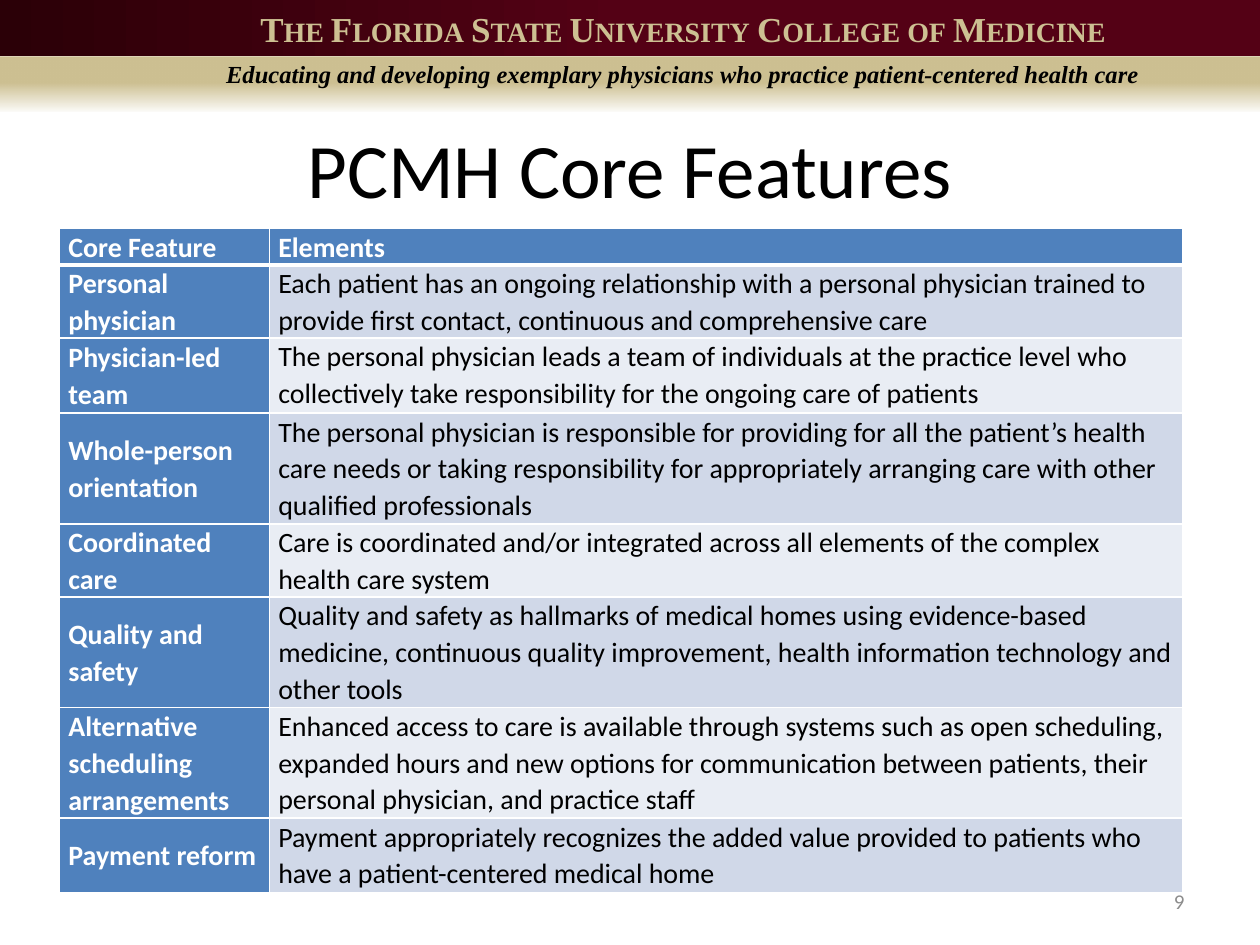
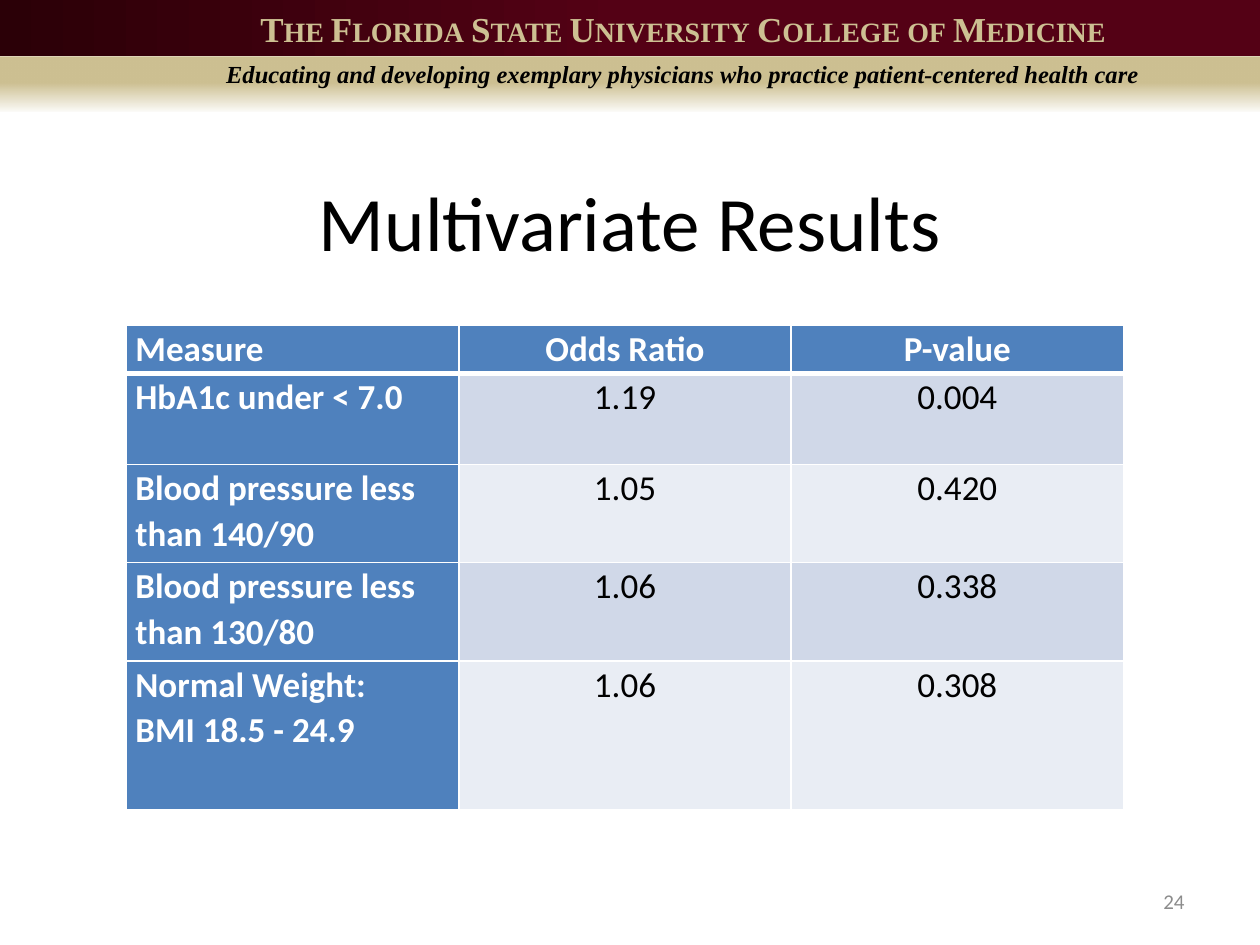
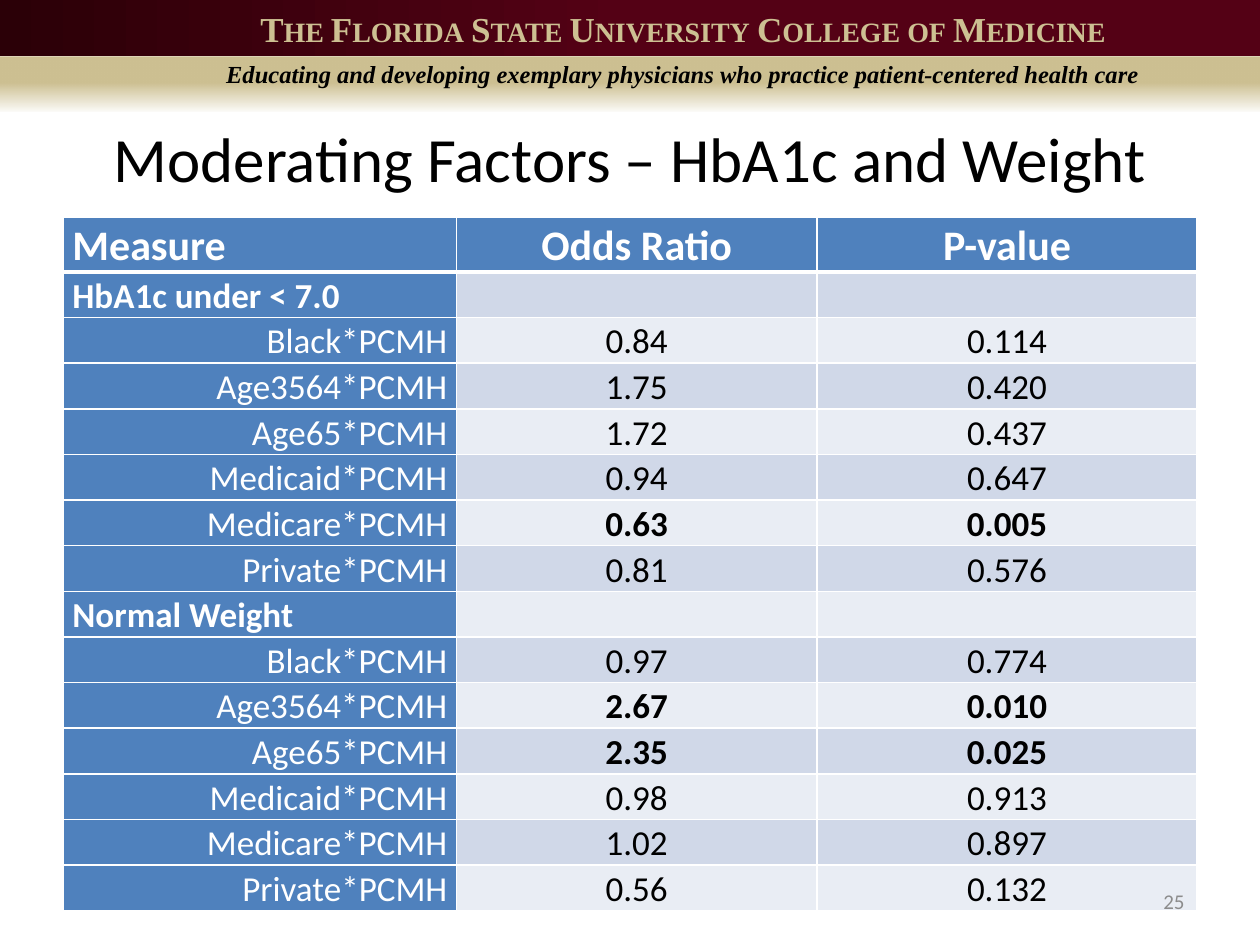
from dataclasses import dataclass

import pptx
import pptx.dml.color
import pptx.enum.shapes
import pptx.enum.text
import pptx.oxml
import pptx.oxml.ns
import pptx.util
from lxml import etree

Cm = pptx.util.Cm
ALIGN = pptx.enum.text.PP_ALIGN
ANCHOR = pptx.enum.text.MSO_ANCHOR
qn = pptx.oxml.ns.qn


@dataclass(frozen=True)
class Theme:
    garnet: str = "540115"
    dark_garnet: str = "2B0007"
    gold: str = "CDC092"
    blue: str = "4F81BD"
    odd_row: str = "D0D8E8"
    even_row: str = "E9EDF4"
    white: str = "FFFFFF"
    black: str = "000000"
    gray: str = "8C8C8C"
    body_font: str = "Calibri"
    banner_font: str = "Times New Roman"
    title_size: int = 44
    long_title_size: int = 36
    large_size: int = 24
    medium_size: int = 20
    small_size: int = 16
    slogan_size: int = 14
    number_size: int = 12
    line_spacing: float = 1.07
    thin_border: float = 1
    thick_border: float = 3


THEME = Theme()


def rgb(color):
    return pptx.dml.color.RGBColor.from_string(color)


def write(frame, text, *, size, color=THEME.black, font=THEME.body_font, bold=False,
          italic=False, small_caps=False, align=ALIGN.LEFT, spacing=None):
    """Fill a text frame, one paragraph for each line of text."""
    frame.word_wrap = True
    for index, line in enumerate(text.split("\n")):
        para = frame.add_paragraph() if index else frame.paragraphs[0]
        para.alignment = align
        if spacing:
            para.line_spacing = spacing
        span = para.add_run()
        span.text = line
        span.font.name = font
        span.font.size = pptx.util.Pt(size)
        span.font.bold = bold
        span.font.italic = italic
        span.font.color.rgb = rgb(color)
        if small_caps:
            span.font._element.set("cap", "small")


def set_border(cell, side, width):
    """Draw a white border on side L, R, T or B; call before the cell is filled."""
    line = etree.SubElement(cell._tc.get_or_add_tcPr(), qn(f"a:ln{side}"),
                            w=str(pptx.util.Pt(width)))
    fill = etree.SubElement(line, qn("a:solidFill"))
    etree.SubElement(fill, qn("a:srgbClr"), val=THEME.white)


class Builder:
    def __init__(self, theme):
        self.theme = theme
        self.deck = pptx.Presentation()
        self.deck.slide_width = Cm(25.4)
        self.deck.slide_height = Cm(19.05)
        self.page = None

    def start(self, title, number, title_top, title_size=THEME.title_size):
        """Add a page with its banner, title and number."""
        theme = self.theme
        self.page = self.deck.slides.add_slide(self.deck.slide_layouts[6])
        self.band(1.14, 1.1, 270, [(0.47, theme.gold), (1, theme.gold)], end_alpha=5)
        self.band(0, 1.14, 180, [(0.5, theme.garnet), (1, theme.dark_garnet)])
        self.text("The Florida State University College of Medicine",
                  1.07, 0.03, 25.4, 1.12, size=theme.medium_size, color=theme.gold,
                  font=theme.banner_font, bold=True, small_caps=True, align=ALIGN.CENTER)
        self.text("Educating and developing exemplary physicians who practice "
                  "patient-centered health care",
                  1.07, 1.06, 25.4, 0.85, size=theme.slogan_size, font=theme.banner_font,
                  bold=True, italic=True, align=ALIGN.CENTER)
        self.text(title, 1.27, title_top, 22.86, 1.7, anchor=ANCHOR.MIDDLE,
                  size=title_size, align=ALIGN.CENTER)
        self.number = number

    def finish(self):
        """Add the page number in front of everything else."""
        self.text(str(self.number), 18.21, 17.65, 5.92, 1.02, anchor=ANCHOR.MIDDLE,
                  size=self.theme.number_size, color=self.theme.gray, align=ALIGN.RIGHT)

    def band(self, top, height, angle, stops, end_alpha=None):
        """Add a full-width gradient band; end_alpha is the last stop's opacity in percent."""
        band = self.page.shapes.add_shape(pptx.enum.shapes.MSO_SHAPE.RECTANGLE,
                                          0, Cm(top), self.deck.slide_width, Cm(height))
        band.shadow.inherit = False
        band.line.fill.background()
        band.fill.gradient()
        band.fill.gradient_angle = angle
        for stop, (position, color) in zip(band.fill.gradient_stops, stops):
            stop.position = position
            stop.color.rgb = rgb(color)
        if end_alpha is not None:
            last_color = list(band._element.spPr.iter(qn("a:srgbClr")))[-1]
            etree.SubElement(last_color, qn("a:alpha"), val=str(end_alpha * 1000))

    def text(self, text, left, top, width, height, anchor=ANCHOR.TOP, **style):
        box = self.page.shapes.add_textbox(Cm(left), Cm(top), Cm(width), Cm(height))
        box.text_frame.vertical_anchor = anchor
        write(box.text_frame, text, **style)

    def table(self, left, top, widths, heights, rows, size, header_size=None,
              label_anchor=ANCHOR.TOP, value_align=ALIGN.CENTER, grouped=False):
        """Add a table; if grouped, rows under a heading are indented and p < 0.05 is bold."""
        theme = self.theme
        table = self.page.shapes.add_table(
            len(rows), len(widths), Cm(left), Cm(top), Cm(sum(widths)), Cm(sum(heights))).table
        table.horz_banding = False
        for column, width in zip(table.columns, widths):
            column.width = Cm(width)
        for r, (values, height) in enumerate(zip(rows, heights)):
            table.rows[r].height = Cm(height)
            header = r == 0
            group_member = grouped and not header and values[-1] != ""
            significant = group_member and float(values[-1]) < 0.05
            for c, value in enumerate(values):
                label = c == 0
                cell = table.cell(r, c)
                cell.margin_left = cell.margin_right = Cm(0.18)
                cell.margin_top = cell.margin_bottom = 0
                if label and not header:
                    cell.vertical_anchor = label_anchor
                for side in "LRTB":
                    thick = (side == "B" and header) or (side == "T" and r == 1)
                    set_border(cell, side, theme.thick_border if thick else theme.thin_border)
                cell.fill.solid()
                banding = theme.odd_row if r % 2 else theme.even_row
                cell.fill.fore_color.rgb = rgb(theme.blue if header or label else banding)
                if not value:
                    continue
                if label:
                    align = ALIGN.RIGHT if group_member else ALIGN.LEFT
                    bold = not group_member
                else:
                    align = value_align
                    bold = header or significant
                write(cell.text_frame, value,
                      size=header_size if header and header_size else size,
                      color=theme.white if header or label else theme.black,
                      bold=bold, align=align, spacing=theme.line_spacing)


CORE_FEATURES = [
    ("Core Feature", "Elements"),
    ("Personal physician",
     "Each patient has an ongoing relationship with a personal physician trained to "
     "provide first contact, continuous and comprehensive care"),
    ("Physician-led team",
     "The personal physician leads a team of individuals at the practice level who "
     "collectively take responsibility for the ongoing care of patients"),
    ("Whole-person orientation",
     "The personal physician is responsible for providing for all the patient’s health "
     "care needs or taking responsibility for appropriately arranging care with other "
     "qualified professionals"),
    ("Coordinated care",
     "Care is coordinated and/or integrated across all elements of the complex "
     "health care system"),
    ("Quality and safety",
     "Quality and safety as hallmarks of medical homes using evidence-based "
     "medicine, continuous quality improvement, health information technology and "
     "other tools"),
    ("Alternative scheduling\narrangements",
     "Enhanced access to care is available through systems such as open scheduling, "
     "expanded hours and new options for communication between patients, their "
     "personal physician, and practice staff"),
    ("Payment reform",
     "Payment appropriately recognizes the added value provided to patients who "
     "have a patient-centered medical home"),
]

RESULT_HEADER = ("Measure", "Odds Ratio", "P-value")

MULTIVARIATE_RESULTS = [
    RESULT_HEADER,
    ("HbA1c under < 7.0", "1.19", "0.004"),
    ("Blood pressure less than 140/90", "1.05", "0.420"),
    ("Blood pressure less than 130/80", "1.06", "0.338"),
    ("Normal Weight:\nBMI 18.5 - 24.9", "1.06", "0.308"),
]

FACTORS = ["Black", "Age3564", "Age65", "Medicaid", "Medicare", "Private"]

MODERATED_MEASURES = {
    "HbA1c under < 7.0": [("0.84", "0.114"), ("1.75", "0.420"), ("1.72", "0.437"),
                          ("0.94", "0.647"), ("0.63", "0.005"), ("0.81", "0.576")],
    "Normal Weight": [("0.97", "0.774"), ("2.67", "0.010"), ("2.35", "0.025"),
                      ("0.98", "0.913"), ("1.02", "0.897"), ("0.56", "0.132")],
}


def moderating_rows():
    rows = [RESULT_HEADER]
    for measure, results in MODERATED_MEASURES.items():
        rows.append((measure, "", ""))
        rows += [(f"{factor}*PCMH", *result) for factor, result in zip(FACTORS, results)]
    return rows


def main():
    builder = Builder(THEME)

    builder.start("PCMH Core Features", 9, title_top=2.54)
    builder.table(1.2, 4.6, [4.23, 18.42], [0.74, 1.47, 1.52, 2.23, 1.47, 2.23, 2.23, 1.5],
                  CORE_FEATURES, THEME.small_size, label_anchor=ANCHOR.MIDDLE,
                  value_align=ALIGN.LEFT)
    builder.finish()

    builder.start("Multivariate Results", 24, title_top=3.6)
    builder.table(2.55, 6.56, [6.7] * 3, [0.97, 1.83, 1.98, 1.98, 3],
                  MULTIVARIATE_RESULTS, THEME.medium_size)
    builder.finish()

    builder.start("Moderating Factors – HbA1c and Weight", 25, title_top=2.33,
                  title_size=THEME.long_title_size)
    rows = moderating_rows()
    builder.table(1.28, 4.38, [7.92, 7.27, 7.66], [1.1] + [0.92] * (len(rows) - 1),
                  rows, THEME.medium_size, header_size=THEME.large_size, grouped=True)
    builder.finish()

    builder.deck.save("out.pptx")


if __name__ == "__main__":
    main()
